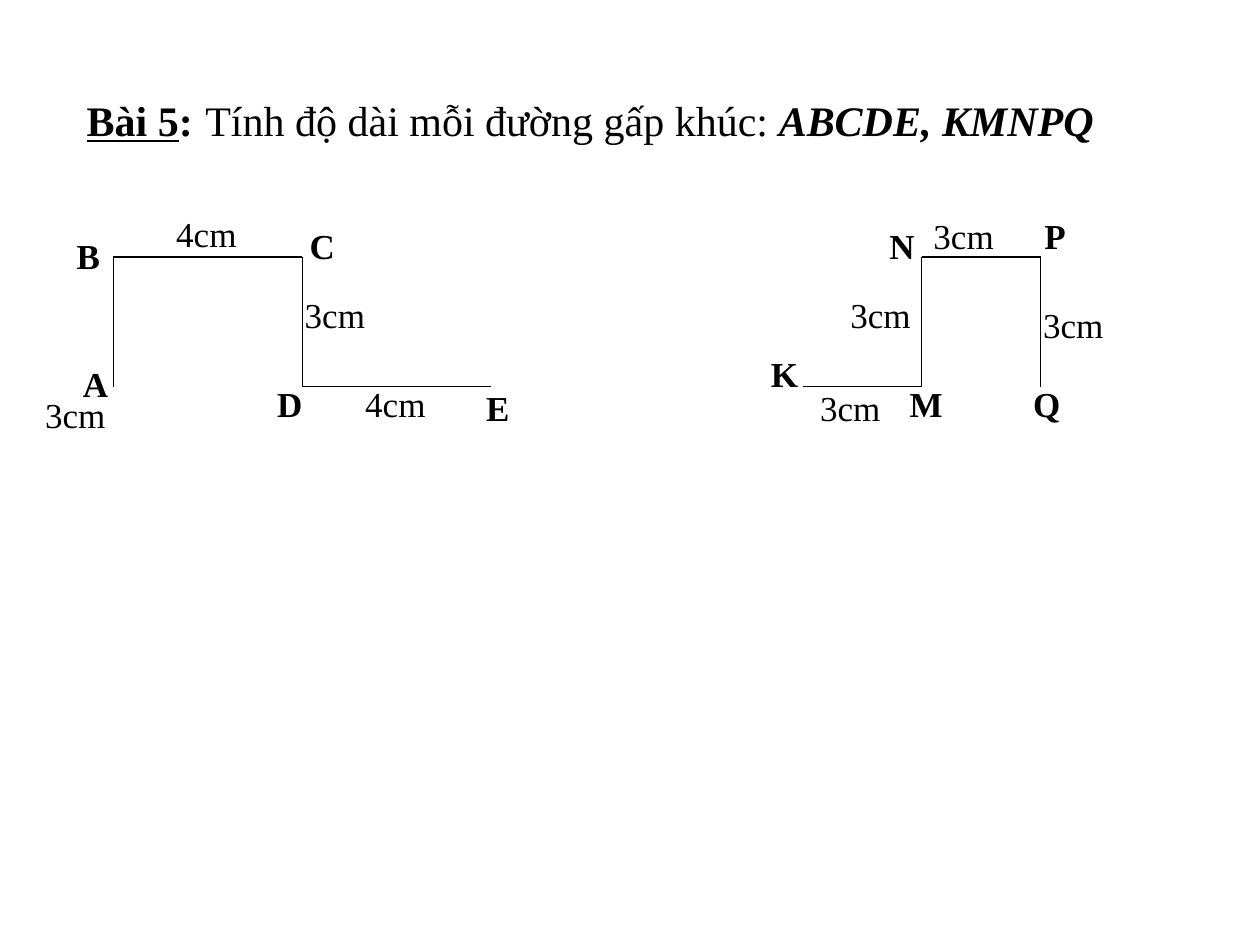
from lxml.etree import SubElement
from pptx import Presentation
from pptx.dml.color import RGBColor
from pptx.enum.shapes import MSO_CONNECTOR
from pptx.enum.text import MSO_ANCHOR, MSO_AUTO_SIZE, PP_ALIGN
from pptx.oxml.ns import qn
from pptx.util import Inches, Pt

COLORS = {"ink": "000000", "paper": "FFFFFF"}
FONT = "Times New Roman"
SIDE_HEIGHT = 1.03
LABEL_HEIGHT = 0.43
POINT_WIDTH = 0.55
LENGTH_WIDTH = 1.02

FRAME_FORMAT = {
    "word_wrap": True,
    "auto_size": MSO_AUTO_SIZE.NONE,
    "vertical_anchor": MSO_ANCHOR.TOP,
}


def write_text(box, spans, size):
    frame = box.text_frame
    for name, value in FRAME_FORMAT.items():
        setattr(frame, name, value)
    para = frame.paragraphs[0]
    para.alignment = PP_ALIGN.LEFT
    for text, style in spans:
        span = para.add_run()
        span.text = text
        for name, value in {"name": FONT, "size": Pt(size), **style}.items():
            setattr(span.font, name, value)
        span.font.color.rgb = RGBColor.from_string(COLORS["ink"])


def add_label(page, left, top, width, height, spans, size=20):
    box = page.shapes.add_textbox(*map(Inches, (left, top, width, height)))
    write_text(box, spans, size)


def add_heading(page, left, top, width, height):
    number_width, title_offset = 1.26, 0.94
    add_label(page, left, top, number_width, height,
              [("Bài 5", {"bold": True, "underline": True}), (":", {"bold": True})], 24)
    title = page.shapes.title
    place = {"left": left + title_offset, "top": top,
             "width": width - title_offset, "height": height}
    for name, value in place.items():
        setattr(title, name, Inches(value))
    write_text(title, [
        ("Tính độ dài mỗi đường gấp khúc: ", {"bold": False}),
        ("ABCDE, KMNPQ", {"bold": True, "italic": True}),
    ], 24)


def add_segment(page, start, end):
    line = page.shapes.add_connector(
        MSO_CONNECTOR.STRAIGHT, *map(Inches, (*start, *end)))
    line.line.color.rgb = RGBColor.from_string(COLORS["ink"])
    line.line.width = Pt(0.75)
    SubElement(line._element.spPr, qn("a:effectLst"))


def add_broken_line(page, left, top, side_width, corners, points, lengths):
    spots = [(left + column * side_width, top + row * SIDE_HEIGHT)
             for column, row in corners]
    for start, end in zip(spots, spots[1:]):
        add_segment(page, start, end)
    for labels, width, style in ((lengths, LENGTH_WIDTH, {}),
                                 (points, POINT_WIDTH, {"bold": True})):
        for text, across, down in labels:
            add_label(page, left + across, top + down, width, LABEL_HEIGHT,
                      [(text, style)])


def main():
    deck = Presentation()
    deck.slide_width, deck.slide_height = Inches(10), Inches(7.5)
    page = deck.slides.add_slide(deck.slide_layouts[5])
    page.background.fill.solid()
    page.background.fill.fore_color.rgb = RGBColor.from_string(COLORS["paper"])

    add_heading(page, 0.59, 0.7, 8.5, 0.5)
    add_broken_line(
        page, 0.9, 2.04, 1.5,
        corners=[(0, 1), (0, 0), (1, 0), (1, 1), (2, 1)],
        points=[("A", -0.34, 0.79), ("B", -0.39, -0.23), ("C", 1.46, -0.31),
                ("D", 1.2, 0.95), ("E", 2.86, 0.98)],
        lengths=[("3cm", -0.64, 1.03), ("4cm", 0.4, -0.4),
                 ("3cm", 1.42, 0.24), ("4cm", 1.9, 0.95)],
    )
    add_broken_line(
        page, 6.37, 2.04, 0.945,
        corners=[(0, 1), (1, 1), (1, 0), (2, 0), (2, 1)],
        points=[("K", -0.35, 0.71), ("M", 0.75, 0.95), ("N", 0.59, -0.31),
                ("P", 1.82, -0.39), ("Q", 1.73, 0.95)],
        lengths=[("3cm", 0.04, 0.98), ("3cm", 0.28, 0.24),
                 ("3cm", 0.94, -0.39), ("3cm", 1.81, 0.32)],
    )
    deck.save("out.pptx")


if __name__ == "__main__":
    main()
